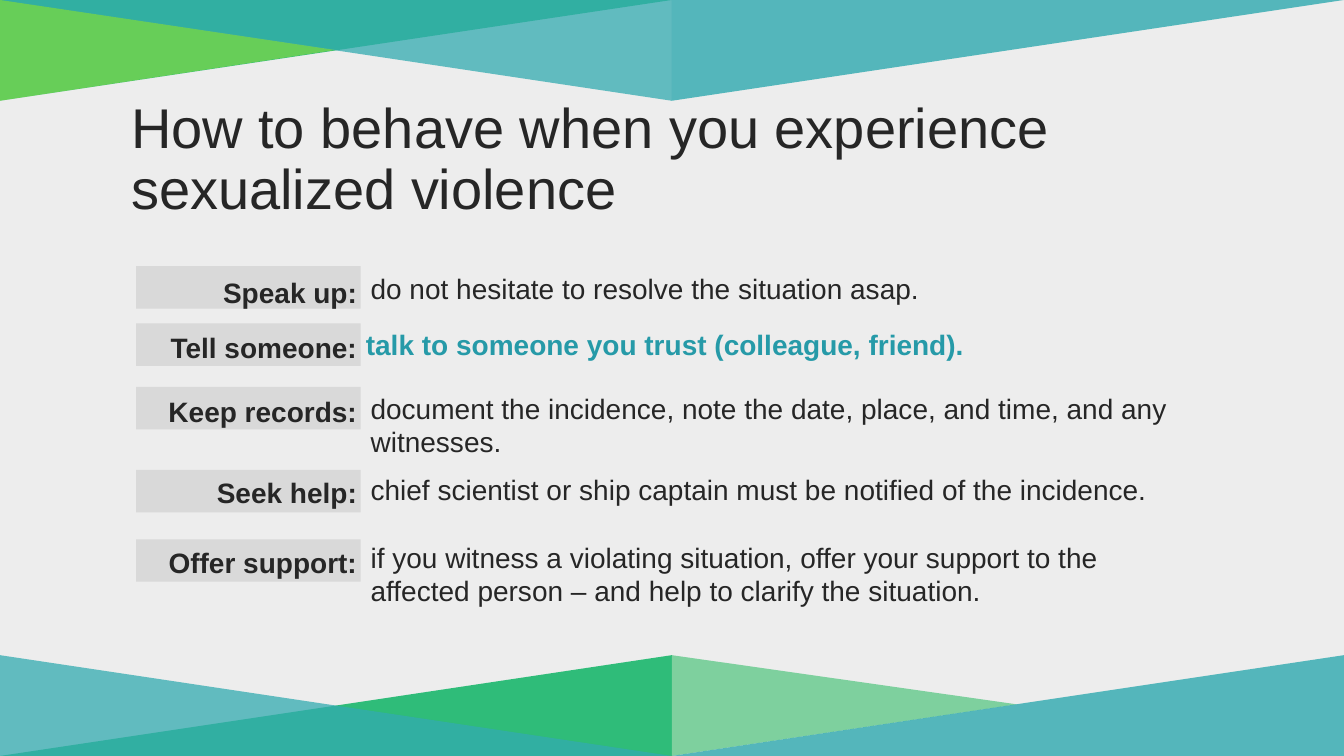
from dataclasses import dataclass

from lxml import etree
from pptx import Presentation
from pptx.dml.color import RGBColor
from pptx.enum.shapes import MSO_SHAPE
from pptx.enum.text import MSO_ANCHOR, MSO_AUTO_SIZE, PP_ALIGN
from pptx.oxml.ns import qn
from pptx.shapes.autoshape import Shape
from pptx.slide import Slide
from pptx.text.text import TextFrame
from pptx.util import Cm, Pt

RECT = MSO_SHAPE.RECTANGLE
MIDDLE = MSO_ANCHOR.MIDDLE
TOP = MSO_ANCHOR.TOP
FIXED = MSO_AUTO_SIZE.NONE
LEFT = PP_ALIGN.LEFT
RIGHT = PP_ALIGN.RIGHT

WIDE, HIGH = 33.87, 19.05
HALF, DEPTH = 16.93, 2.54
EDGE = HIGH - DEPTH


@dataclass(frozen=True)
class Theme:
    font: str = "Arial"
    back: str = "EDEDED"
    bar: str = "D9D9D9"
    ink: str = "262626"
    accent: str = "269AA8"
    green: str = "00B05C"
    teal: str = "33ABB0"
    mint: str = "7ED09E"
    yellow: str = "FFFF00"
    title: int = 40
    body: int = 20


@dataclass(frozen=True)
class Facet:
    points: tuple[tuple[float, float], ...]
    color: str
    alpha: int = 100


@dataclass(frozen=True)
class Row:
    label: str
    detail: str
    bar: float
    top: float
    base: float
    wide: float = 20.45
    high: float = 1.3
    left: float = 9.09
    accent: bool = False


THEME = Theme()

FACETS = (
    Facet(((0, HIGH), (HALF, HIGH), (HALF, EDGE)), THEME.green, 80),
    Facet(((0, EDGE), (0, HIGH), (HALF, HIGH)), THEME.teal, 75),
    Facet(((HALF, EDGE), (HALF, HIGH), (25.63, 17.75)), THEME.mint),
    Facet(((HALF, HIGH), (WIDE, HIGH), (WIDE, EDGE)), THEME.teal, 82),
    Facet(((0, 0), (0, DEPTH), (HALF, 0)), THEME.green, 80),
    Facet(((0, 0), (HALF, 0), (HALF, DEPTH)), THEME.teal, 75),
    Facet(((HALF, 0), (HALF, DEPTH), (WIDE, 0)), THEME.teal, 82),
    Facet(((0, 0), (0, DEPTH), (8.45, 1.26)), THEME.yellow, 27),
)

ROWS = (
    Row("Speak up:", "do not hesitate to resolve the situation asap.",
        6.71, 6.53, 6.71),
    Row("Tell someone:", "talk to someone you trust (colleague, friend).",
        8.15, 7.92, 8.13, left=8.97, accent=True),
    Row("Keep records:",
        "document the incidence, note the date, place, and time, and any witnesses.",
        9.75, 9.53, 9.73, wide=21.69, high=2.21),
    Row("Seek help:",
        "chief scientist or ship captain must be notified of the incidence.",
        11.84, 11.58, 11.79),
    Row("Offer support:",
        "if you witness a violating situation, offer your support to the "
        "affected person – and help to clarify the situation.",
        13.59, 13.34, 13.49, wide=20.27, high=2.51),
)


def paint(shape: Shape, color: str, alpha: int = 100) -> None:
    shape.shadow.inherit = False
    shape.fill.solid()
    shape.fill.fore_color.rgb = RGBColor.from_string(color)
    shape.line.fill.background()
    if alpha < 100:
        tint = next(shape._element.spPr.iter(qn("a:srgbClr")))
        etree.SubElement(tint, qn("a:alpha"), val=str(alpha * 1000))


def draw_facet(slide: Slide, facet: Facet) -> None:
    first, *rest = [(Cm(x), Cm(y)) for x, y in facet.points]
    form = slide.shapes.build_freeform(*first)
    form.add_line_segments(rest, close=True)
    paint(form.convert_to_shape(), facet.color, facet.alpha)


def write(frame: TextFrame, text: str, size: int, color: str,
          bold: bool = False, align: PP_ALIGN = LEFT,
          anchor: MSO_ANCHOR = TOP) -> None:
    frame.text = text
    frame.word_wrap = True
    frame.auto_size = FIXED
    frame.vertical_anchor = anchor
    line = frame.paragraphs[0]
    line.alignment = align
    font = line.runs[0].font
    font.name = THEME.font
    font.size = Pt(size)
    font.bold = bold
    font.color.rgb = RGBColor.from_string(color)


def draw_title(slide: Slide, text: str) -> None:
    title = slide.shapes.title
    title.left, title.top = Cm(3.05), Cm(2.21)
    title.width, title.height = Cm(29.21), Cm(3.68)
    write(title.text_frame, text, THEME.title, THEME.ink, anchor=MIDDLE)
    title.text_frame.paragraphs[0].line_spacing = 0.9


def draw_row(slide: Slide, row: Row) -> None:
    shapes = slide.shapes
    bar = shapes.add_shape(RECT, Cm(3.43), Cm(row.bar), Cm(5.66), Cm(1.07))
    paint(bar, THEME.bar)

    label = shapes.add_textbox(Cm(3.96), Cm(row.top), Cm(5.29), Cm(1.3))
    write(label.text_frame, row.label, THEME.body, THEME.ink, True, RIGHT)
    line = label.text_frame.paragraphs[0]
    line.line_spacing = Pt(32)
    line.space_before = Pt(10)

    detail = shapes.add_textbox(
        Cm(row.left), Cm(row.base), Cm(row.wide), Cm(row.high))
    color = THEME.accent if row.accent else THEME.ink
    write(detail.text_frame, row.detail, THEME.body, color, row.accent)
    detail.text_frame.paragraphs[0].space_before = Pt(12)


def main() -> None:
    deck = Presentation()
    deck.slide_width, deck.slide_height = Cm(WIDE), Cm(HIGH)
    slide = deck.slides.add_slide(deck.slide_layouts[5])
    slide.background.fill.solid()
    slide.background.fill.fore_color.rgb = RGBColor.from_string(THEME.back)
    for facet in FACETS:
        draw_facet(slide, facet)
    draw_title(slide, "How to behave when you experience sexualized violence")
    for row in ROWS:
        draw_row(slide, row)
    deck.save("out.pptx")


if __name__ == "__main__":
    main()
